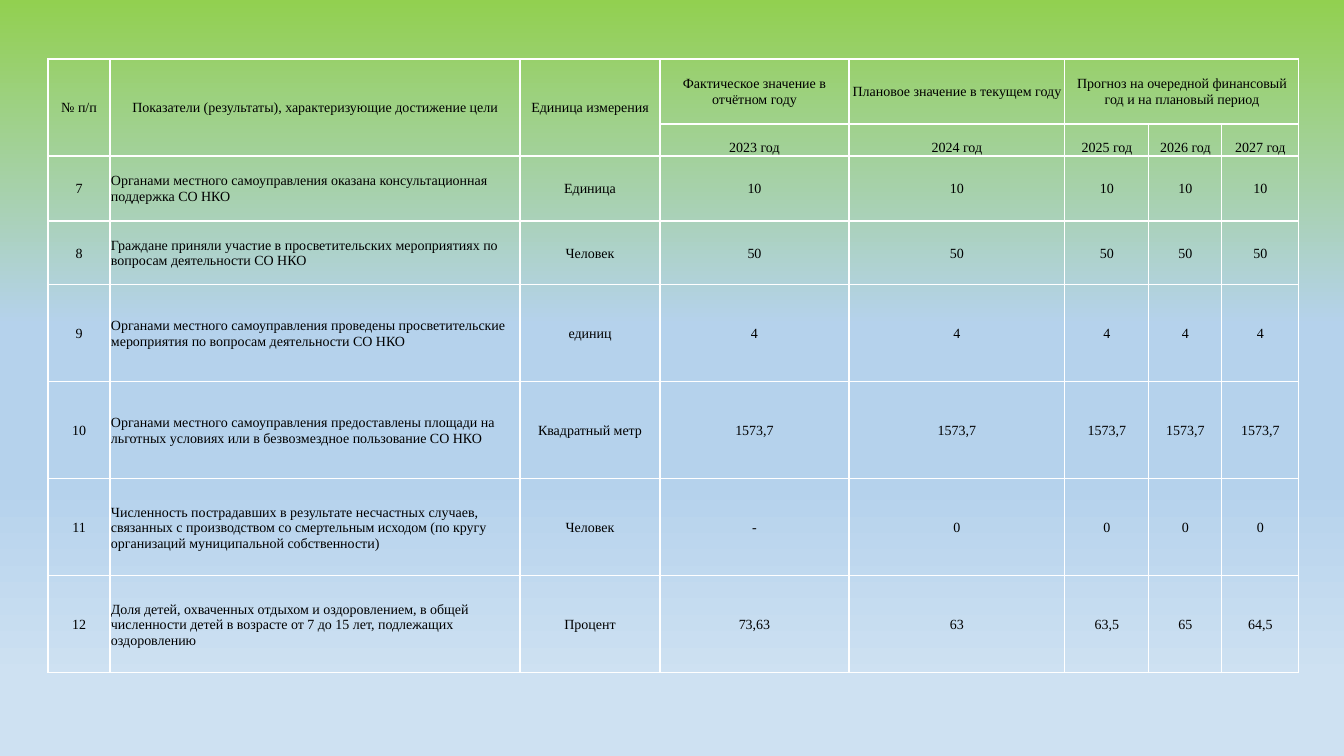
"""Build the slide with the table of target indicators 7 to 12."""
import lxml.etree
import pptx
import pptx.dml.color
import pptx.enum.text
import pptx.oxml
import pptx.oxml.ns
import pptx.util

COLORS = {"text": "000000", "border": "FFFFFF", "green": "92D050", "blue": "B5D2EC", "pale": "CEE1F2"}
BACKGROUND_STOPS = [(0, "green"), (43, "blue"), (64, "blue"), (90, "pale")]
COLUMN_WIDTHS = [62, 410, 140, 189, 216, 84, 73, 77]
ROW_HEIGHTS = [65, 32, 65, 64] + [97] * 4
HEADER_ROWS = [
    ["№ п/п", "Показатели (результаты), характеризующие достижение цели", "Единица измерения",
     "Фактическое значение в отчётном году", "Плановое значение в текущем году",
     "Прогноз на очередной финансовый год и на плановый период", "", ""],
    ["", "", ""] + [f"{year} год" for year in range(2023, 2028)],
]
INDICATORS = [
    ("Органами местного самоуправления оказана консультационная поддержка СО НКО",
     "Единица", ["10"] * 5),
    ("Граждане приняли участие в просветительских мероприятиях по вопросам деятельности СО НКО",
     "Человек", ["50"] * 5),
    ("Органами местного самоуправления проведены просветительские мероприятия "
     "по вопросам деятельности СО НКО", "единиц", ["4"] * 5),
    ("Органами местного самоуправления предоставлены площади на льготных условиях "
     "или в безвозмездное пользование СО НКО", "Квадратный метр", ["1573,7"] * 5),
    ("Численность пострадавших в результате несчастных случаев, связанных с производством "
     "со смертельным исходом (по кругу организаций муниципальной собственности)",
     "Человек", ["-"] + ["0"] * 4),
    ("Доля детей, охваченных отдыхом и оздоровлением, в общей численности детей "
     "в возрасте от 7 до 15 лет, подлежащих оздоровлению",
     "Процент", ["73,63", "63", "63,5", "65", "64,5"]),
]
MERGES = [((0, column), (1, column)) for column in range(3)] + [((0, 5), (0, 7))]


def px(length):
    return pptx.util.Emu(round(length * 914400 / 100.8))


class SlideBuilder:
    font_name = "Times New Roman"
    font_size = pptx.util.Pt(10)

    def __init__(self, presentation):
        self.slide = presentation.slides.add_slide(presentation.slide_layouts[6])

    def background(self, stops):
        fill = self.slide.background.fill
        fill.gradient()
        fill.gradient_angle = 270
        stop_list = self.slide.element.xpath(".//p:bg//a:gsLst")[0]
        for stop in list(stop_list):
            stop_list.remove(stop)
        for percent, color in stops:
            stop = lxml.etree.SubElement(stop_list, pptx.oxml.ns.qn("a:gs"), pos=str(percent * 1000))
            lxml.etree.SubElement(stop, pptx.oxml.ns.qn("a:srgbClr"), val=COLORS[color])

    def table(self, left, top, widths, heights, rows, merges):
        frame = self.slide.shapes.add_table(
            len(heights), len(widths), px(left), px(top), px(sum(widths)), px(sum(heights)))
        table = frame.table
        for column, width in zip(table.columns, widths):
            column.width = px(width)
        for row, height in zip(table.rows, heights):
            row.height = px(height)
        for row_index, row in enumerate(rows):
            for column_index, text in enumerate(row):
                is_year = row_index == 1 and column_index > 2
                is_name = row_index > 1 and column_index == 1
                self.cell(table.cell(row_index, column_index), text,
                          pptx.enum.text.MSO_ANCHOR.BOTTOM if is_year else pptx.enum.text.MSO_ANCHOR.MIDDLE,
                          pptx.enum.text.PP_ALIGN.LEFT if is_name else pptx.enum.text.PP_ALIGN.CENTER)
        for first, last in merges:
            table.cell(*first).merge(table.cell(*last))

    def cell(self, cell, text, anchor, alignment):
        cell.text = text
        cell.vertical_anchor = anchor
        cell.margin_left = cell.margin_right = cell.margin_top = px(1)
        cell.margin_bottom = 0
        cell.fill.background()
        paragraph = cell.text_frame.paragraphs[0]
        paragraph.alignment = alignment
        paragraph.font.name = self.font_name
        paragraph.font.size = self.font_size
        paragraph.font.color.rgb = pptx.dml.color.RGBColor.from_string(COLORS["text"])
        self.borders(cell)

    def borders(self, cell):
        properties = cell._tc.get_or_add_tcPr()
        for position, side in enumerate(["lnL", "lnR", "lnT", "lnB"]):
            properties.insert(position, pptx.oxml.parse_xml(
                f'<a:{side} {pptx.oxml.ns.nsdecls("a")} w="12700"><a:solidFill>'
                f'<a:srgbClr val="{COLORS["border"]}"/></a:solidFill></a:{side}>'))


def main():
    presentation = pptx.Presentation()
    presentation.slide_width = px(1344)
    presentation.slide_height = px(756)
    builder = SlideBuilder(presentation)
    builder.background(BACKGROUND_STOPS)
    indicator_rows = [[str(number), name, unit, *values]
                      for number, (name, unit, values) in enumerate(INDICATORS, start=7)]
    builder.table(48, 59, COLUMN_WIDTHS, ROW_HEIGHTS, HEADER_ROWS + indicator_rows, MERGES)
    presentation.save("out.pptx")


if __name__ == "__main__":
    main()
